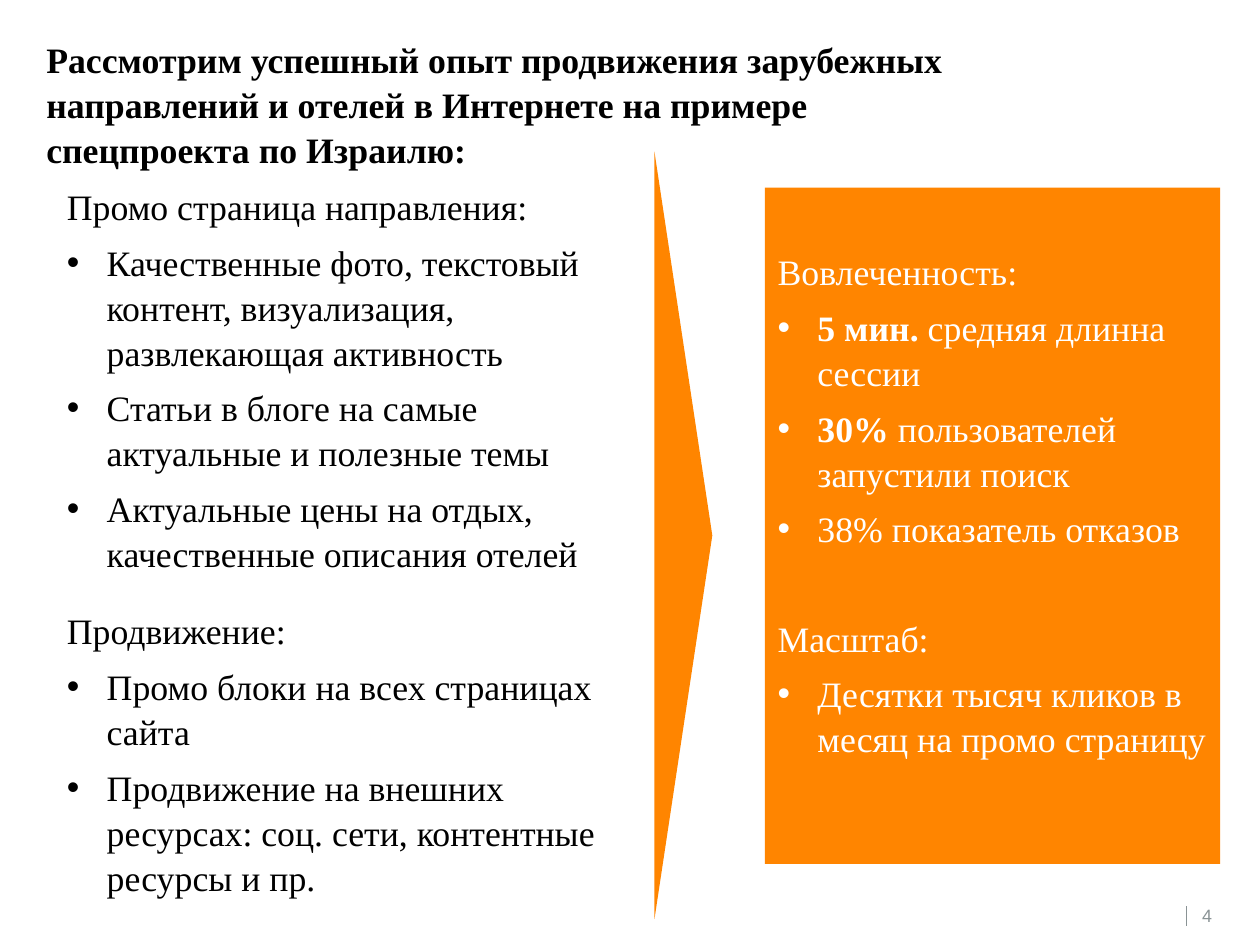
from lxml import etree
from pptx import Presentation
from pptx.dml.color import RGBColor
from pptx.enum.shapes import MSO_CONNECTOR, MSO_SHAPE
from pptx.enum.text import MSO_ANCHOR, MSO_AUTO_SIZE, PP_ALIGN
from pptx.oxml.ns import qn
from pptx.util import Inches, Pt

STRAIGHT = MSO_CONNECTOR.STRAIGHT
TRIANGLE = MSO_SHAPE.ISOSCELES_TRIANGLE
RECTANGLE = MSO_SHAPE.RECTANGLE
TOP, MIDDLE = MSO_ANCHOR.TOP, MSO_ANCHOR.MIDDLE
NO_FIT = MSO_AUTO_SIZE.NONE
LEFT = PP_ALIGN.LEFT

COLORS = {"ink": "000000", "accent": "FF8500", "paper": "FFFFFF", "muted": "8A9395"}
SERIF, SANS = "Times New Roman", "Arial"

HEADLINE = ("Рассмотрим успешный опыт продвижения зарубежных направлений и отелей "
            "в Интернете на примере спецпроекта по Израилю:")
ACTIONS = [
    ("Промо страница направления:", [
        ("", "Качественные фото, текстовый контент, визуализация, развлекающая активность"),
        ("", "Статьи в блоге на самые актуальные и полезные темы"),
        ("", "Актуальные цены на отдых, качественные описания отелей"),
    ]),
    ("Продвижение:", [
        ("", "Промо блоки на всех страницах сайта"),
        ("", "Продвижение на внешних ресурсах: соц. сети, контентные ресурсы и пр."),
    ]),
]
RESULTS = [
    ("Вовлеченность:", [
        ("5 мин.", " средняя длинна сессии"),
        ("30%", " пользователей запустили поиск"),
        ("", "38% показатель отказов"),
    ]),
    ("Масштаб:", [("", "Десятки тысяч кликов в месяц на промо страницу")]),
]


class SlideBuilder:
    """Holds the slide and its text style, and adds each kind of element."""

    def __init__(self, slide):
        self.slide = slide
        self.size = 20
        self.line_spacing = 1.05
        self.item_gap = 6
        self.indent = Inches(0.31)

    def place(self, shape, left, top, width, height):
        shape.left, shape.top = Inches(left), Inches(top)
        shape.width, shape.height = Inches(width), Inches(height)

    def prepare(self, frame, anchor):
        frame.word_wrap = True
        frame.auto_size = NO_FIT
        frame.vertical_anchor = anchor

    def style(self, paragraph, color, gap=0, bold=None, bullet=False):
        paragraph.alignment = LEFT
        paragraph.line_spacing = self.line_spacing
        paragraph.space_before = Pt(gap)
        properties = paragraph._p.get_or_add_pPr()
        properties.set("marL", str(self.indent if bullet else 0))
        properties.set("indent", str(-self.indent if bullet else 0))
        if bullet:
            etree.SubElement(properties, qn("a:buFont")).set("typeface", SANS)
            etree.SubElement(properties, qn("a:buChar")).set("char", "•")
        else:
            etree.SubElement(properties, qn("a:buNone"))
        font = paragraph.font
        font.name, font.size, font.bold = SERIF, Pt(self.size), bold
        font.color.rgb = RGBColor.from_string(COLORS[color])

    def title(self, text, *box):
        title = self.slide.shapes.title
        self.place(title, *box)
        self.prepare(title.text_frame, TOP)
        title.text_frame.text = text
        self.style(title.text_frame.paragraphs[0], "ink", bold=True)

    def fill_sections(self, frame, sections, color, section_gap):
        paragraph = frame.paragraphs[0]
        for number, (heading, items) in enumerate(sections):
            if number:
                paragraph = frame.add_paragraph()
            paragraph.text = heading
            self.style(paragraph, color, section_gap if number else 0)
            for lead, rest in items:
                item = frame.add_paragraph()
                if lead:
                    emphasis = item.add_run()
                    emphasis.text, emphasis.font.bold = lead, True
                item.add_run().text = rest
                self.style(item, color, self.item_gap, bullet=True)

    def body(self, sections, *box):
        body = self.slide.placeholders[1]
        self.place(body, *box)
        self.prepare(body.text_frame, TOP)
        self.fill_sections(body.text_frame, sections, "ink", 18)

    def block(self, preset, *box):
        block = self.slide.shapes.add_shape(preset, *map(Inches, box))
        block.shadow.inherit = False
        block.fill.solid()
        block.fill.fore_color.rgb = RGBColor.from_string(COLORS["accent"])
        block.line.fill.background()
        return block

    def panel(self, sections, *box):
        frame = self.block(RECTANGLE, *box).text_frame
        self.prepare(frame, MIDDLE)
        frame.margin_bottom = Inches(0.39)
        self.fill_sections(frame, sections, "paper", 36)

    def rule(self, *ends):
        rule = self.slide.shapes.add_connector(STRAIGHT, *map(Inches, ends))
        rule.line.width = Pt(0.75)
        rule.line.color.rgb = RGBColor.from_string(COLORS["muted"])
        etree.SubElement(rule._element.spPr, qn("a:effectLst"))

    def page_number(self, text, *box):
        frame = self.slide.shapes.add_textbox(*map(Inches, box)).text_frame
        frame.margin_left = frame.margin_right = 0
        frame.margin_top = frame.margin_bottom = 0
        frame.text = text
        font = frame.paragraphs[0].font
        font.name, font.size = SANS, Pt(10)
        font.color.rgb = RGBColor.from_string(COLORS["muted"])


def main():
    deck = Presentation()
    deck.slide_width, deck.slide_height = Inches(9.8), Inches(7.35)
    builder = SlideBuilder(deck.slides.add_slide(deck.slide_layouts[1]))
    builder.title(HEADLINE, 0.26, 0.23, 7.45, 1.11)
    builder.body(ACTIONS, 0.42, 1.37, 4.55, 5.49)
    builder.block(TRIANGLE, 2.33, 3.94, 5.97, 0.45).rotation = 90
    builder.panel(RESULTS, 5.95, 1.46, 3.54, 5.26)
    builder.rule(9.23, 7.05, 9.23, 7.2)
    builder.page_number("4", 9.35, 7.04, 0.21, 0.17)
    deck.save("out.pptx")


if __name__ == "__main__":
    main()
